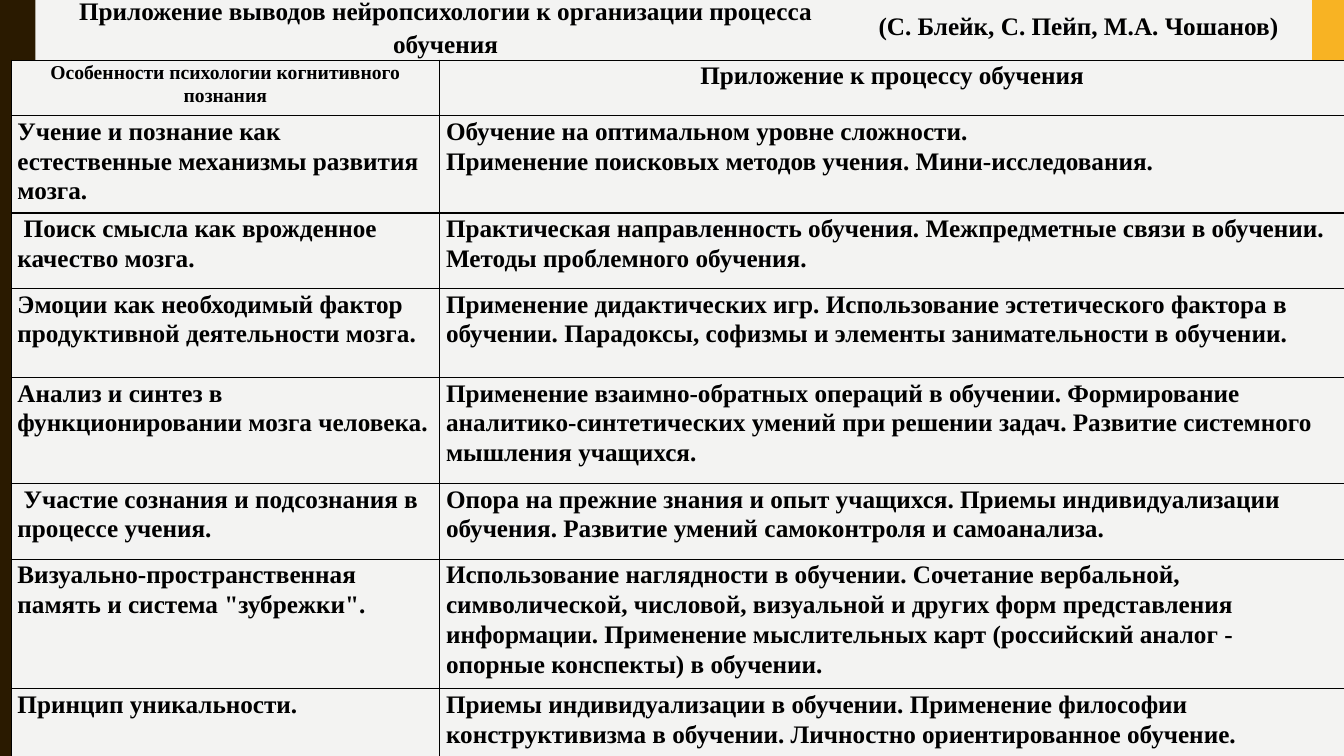
import math
from typing import NamedTuple

from lxml import etree
from pptx import Presentation
from pptx.dml.color import RGBColor
from pptx.enum.shapes import MSO_SHAPE
from pptx.enum.text import MSO_ANCHOR, PP_ALIGN
from pptx.oxml.ns import qn
from pptx.util import Cm, Pt

BLACK = RGBColor(0x00, 0x00, 0x00)
PAPER = RGBColor(0xF3, 0xF3, 0xF2)
BROWN = RGBColor(0x2A, 0x1A, 0x00)
AMBER = RGBColor(0xF8, 0xB3, 0x23)
FONT = "Times New Roman"
LEFT, CENTER = PP_ALIGN.LEFT, PP_ALIGN.CENTER
TOP, MIDDLE = MSO_ANCHOR.TOP, MSO_ANCHOR.MIDDLE
RECTANGLE = MSO_SHAPE.RECTANGLE
SLIDE_W, SLIDE_H = 33.87, 19.05
TITLE_ONLY = 5


class Row(NamedTuple):
    height: float
    feature: str
    practice: list[str]


HEADER = Row(1.4, "Особенности психологии когнитивного познания",
             ["Приложение к процессу обучения"])
ROWS = [
    Row(1.91, "Учение и познание как естественные механизмы развития мозга.",
        ["Обучение на оптимальном уровне сложности.",
         "Применение поисковых методов учения. Мини-исследования."]),
    Row(1.91, " Поиск смысла как врожденное качество мозга.",
        ["Практическая направленность обучения. Межпредметные связи в обучении.",
         "Методы проблемного обучения."]),
    Row(2.24, "Эмоции как необходимый фактор продуктивной деятельности мозга.",
        ["Применение дидактических игр. Использование эстетического фактора в "
         "обучении. Парадоксы, софизмы и элементы занимательности в обучении."]),
    Row(2.67, "Анализ и синтез в функционировании мозга человека.",
        ["Применение взаимно-обратных операций в обучении. Формирование "
         "аналитико-синтетических умений при решении задач. Развитие системного "
         "мышления учащихся."]),
    Row(1.91, " Участие сознания и подсознания в процессе учения.",
        ["Опора на прежние знания и опыт учащихся. Приемы индивидуализации "
         "обучения. Развитие умений самоконтроля и самоанализа."]),
    Row(3.2, 'Визуально-пространственная память и система "зубрежки".',
        ["Использование наглядности в обучении. Сочетание вербальной, "
         "символической, числовой, визуальной и других форм представления "
         "информации. Применение мыслительных карт (российский аналог - опорные "
         "конспекты) в обучении."]),
    Row(1.91, "Принцип уникальности.",
        ["Приемы индивидуализации в обучении. Применение философии "
         "конструктивизма в обучении. Личностно ориентированное обучение."]),
]


def write(tf, texts: list[str], size: float = 18, align=LEFT,
          spacing: float = 1.07) -> None:
    for i, text in enumerate(texts):
        p = tf.paragraphs[0] if i == 0 else tf.add_paragraph()
        p.alignment = align
        p.line_spacing = spacing
        r = p.add_run()
        r.text = text
        r.font.name = FONT
        r.font.size = Pt(size)
        r.font.bold = True
        r.font.color.rgb = BLACK


def paint(sp, color: RGBColor) -> None:
    sp.shadow.inherit = False
    sp.fill.solid()
    sp.fill.fore_color.rgb = color
    sp.line.fill.background()


def add_wavy_band(shapes) -> None:
    middle, swing, period, steps = 2.22, 0.24, 3.81, 100
    edge = []
    for i in range(steps + 1):
        y = SLIDE_H * i / steps
        x = middle - swing * math.cos(2 * math.pi * y / period)
        edge.append((Cm(x), Cm(y)))
    builder = shapes.build_freeform(0, 0)
    builder.add_line_segments(edge + [(0, Cm(SLIDE_H))], close=True)
    paint(builder.convert_to_shape(), BROWN)


def add_borders(cell) -> None:
    tc_pr = cell._tc.get_or_add_tcPr()
    for i, side in enumerate(("a:lnL", "a:lnR", "a:lnT", "a:lnB")):
        ln = etree.Element(qn(side), w=str(Pt(1)))
        fill = etree.SubElement(ln, qn("a:solidFill"))
        etree.SubElement(fill, qn("a:srgbClr"), val=str(BLACK))
        tc_pr.insert(i, ln)


def fill_cell(cell, texts: list[str], size: float, align) -> None:
    cell.margin_left = cell.margin_right = Cm(0.16)
    cell.margin_top = cell.margin_bottom = 0
    cell.vertical_anchor = TOP
    cell.fill.solid()
    cell.fill.fore_color.rgb = PAPER
    add_borders(cell)
    write(cell.text_frame, texts, size, align)


def add_findings(shapes) -> None:
    rows, widths = [HEADER] + ROWS, (10.8, 22.81)
    table = shapes.add_table(len(rows), len(widths), Cm(0.28), Cm(1.52),
                             Cm(sum(widths)),
                             Cm(sum(row.height for row in rows))).table
    table.first_row = table.horz_banding = False
    for column, width in zip(table.columns, widths):
        column.width = Cm(width)
    for i, row in enumerate(rows):
        table.rows[i].height = Cm(row.height)
        is_header = row is HEADER
        align = CENTER if is_header else LEFT
        fill_cell(table.cell(i, 0), [row.feature], 14 if is_header else 18, align)
        fill_cell(table.cell(i, 1), row.practice, 18, align)


def main() -> None:
    prs = Presentation()
    prs.slide_width, prs.slide_height = Cm(SLIDE_W), Cm(SLIDE_H)
    slide = prs.slides.add_slide(prs.slide_layouts[TITLE_ONLY])
    shapes = slide.shapes

    # Background and side bands
    slide.background.fill.solid()
    slide.background.fill.fore_color.rgb = PAPER
    add_wavy_band(shapes)
    paint(shapes.add_shape(RECTANGLE, Cm(33.07), 0, Cm(0.8), Cm(SLIDE_H)), AMBER)

    # Title, raised above the bands
    title = shapes.title
    shapes.element.append(title.element)
    title.left, title.top = Cm(0.89), Cm(-0.25)
    title.width, title.height = Cm(20.68), Cm(1.8)
    title.fill.solid()
    title.fill.fore_color.rgb = PAPER
    title.text_frame.vertical_anchor = MIDDLE
    write(title.text_frame, ["Приложение выводов нейропсихологии к организации "
                             "процесса обучения"], align=CENTER)

    # Authors
    authors = shapes.add_textbox(Cm(21.89), Cm(0.13), Cm(11.35), Cm(1.02))
    authors.text_frame.word_wrap = True
    write(authors.text_frame, ["(С. Блейк, С. Пейп, М.А. Чошанов)"], spacing=1.0)

    # Table
    add_findings(shapes)
    prs.save("out.pptx")


if __name__ == "__main__":
    main()
